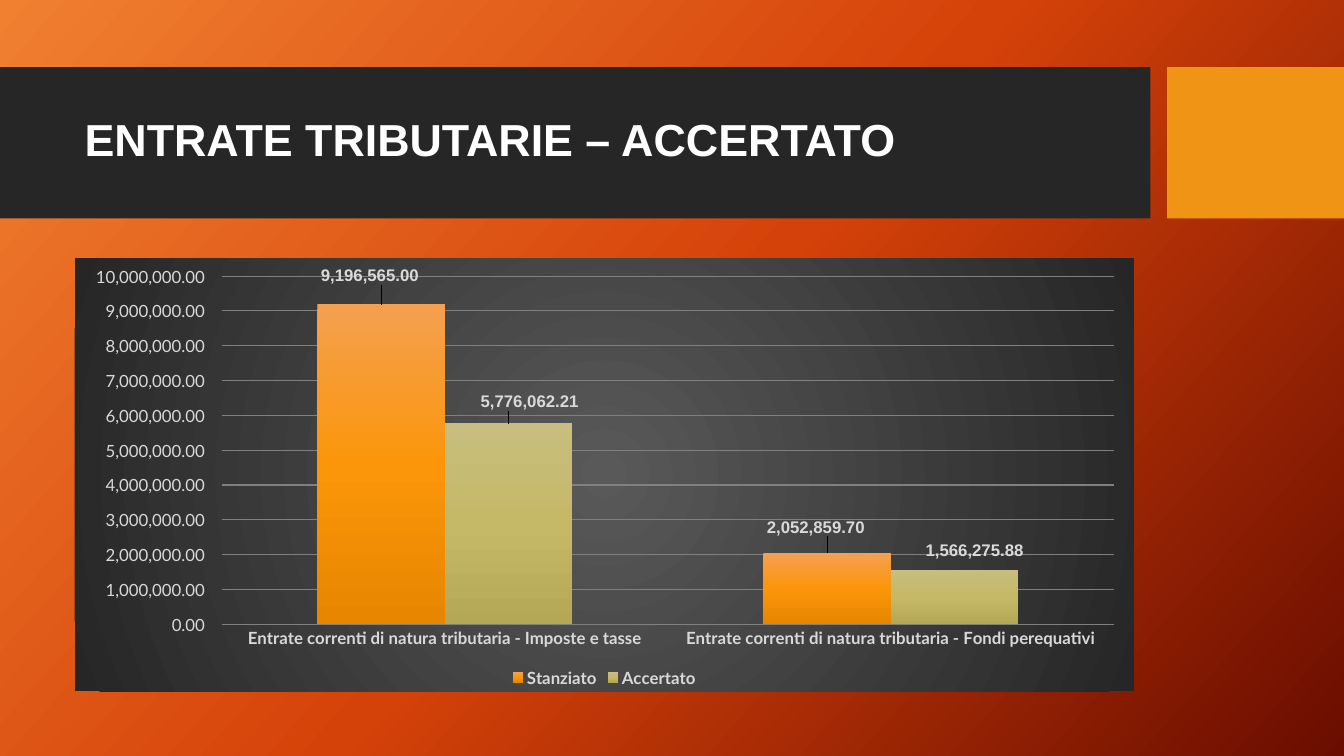
"""Build the slide on tax revenue, budgeted against assessed."""
from pptx import Presentation
from pptx.chart.data import CategoryChartData as ChartData
from pptx.dml.color import RGBColor as RGB
from pptx.enum.chart import XL_CHART_TYPE as CT, XL_LEGEND_POSITION as LP, XL_TICK_MARK as TM
from pptx.enum.shapes import MSO_SHAPE as SHAPE
from pptx.enum.text import MSO_ANCHOR as ANCHOR
from pptx.oxml import parse_xml
from pptx.oxml.ns import nsdecls, qn
from pptx.util import Pt

COLORS = {"band": "262626", "accent": "F09415", "title": "FFFFFF", "label": "D9D9D9", "grid": "808080"}
BACKDROP = [(0, "F18031"), (50, "D54209"), (100, "6A0D00")]
PANEL = [(0, "595959"), (100, "262626")]
CATEGORIES = [
    "Entrate correnti di natura tributaria - Imposte e tasse",
    "Entrate correnti di natura tributaria - Fondi perequativi",
]
EURO = "#,##0.00\\ _€"
SERIES = [
    {"name": "Stanziato", "values": (9196565, 2052859.7), "format": EURO,
     "stops": [(0, "F4A050"), (50, "FB960A"), (100, "E88600")],
     "offsets": [(-0.004, -0.035), (-0.004, -0.028)]},
    {"name": "Accertato", "values": (5776062.21, 1566275.88), "format": "#,##0.00",
     "stops": [(0, "C8BE7F"), (50, "C5B867"), (100, "B4A756")],
     "offsets": [(0.02, -0.019), (0.019, -0.014)]},
]


def gradient(stops, angle=None):
    gs = "".join(f'<a:gs pos="{pos * 1000}"><a:srgbClr val="{c}"/></a:gs>' for pos, c in stops)
    if angle is None:
        way = ('<a:path path="circle"><a:fillToRect l="50000" t="50000" '
               'r="50000" b="50000"/></a:path>')
    else:
        way = f'<a:lin ang="{angle * 60000}" scaled="0"/>'
    return parse_xml(f'<a:gradFill {nsdecls("a")} rotWithShape="1"><a:gsLst>{gs}</a:gsLst>{way}</a:gradFill>')


def layout(inner=False, **values):
    tags = '<c:layoutTarget val="inner"/><c:xMode val="edge"/><c:yMode val="edge"/>' if inner else ""
    tags += "".join(f'<c:{k} val="{v}"/>' for k, v in values.items())
    return parse_xml(f'<c:layout {nsdecls("c")}><c:manualLayout>{tags}</c:manualLayout></c:layout>')


class Deck:
    def __init__(self):
        self.prs = Presentation()
        self.prs.slide_width, self.prs.slide_height = Pt(960), Pt(540)
        self.s = self.prs.slides.add_slide(self.prs.slide_layouts[6])

    def color(self, name):
        return RGB.from_string(COLORS[name])

    def font(self, font, name, size, color, bold=False):
        font.name, font.size, font.bold = name, Pt(size), bold
        font.color.rgb = self.color(color)

    def background(self, stops, angle):
        self.s.background.fill.solid()
        bg = self.s.element.find(".//" + qn("p:bgPr"))
        bg.replace(bg.find(qn("a:solidFill")), gradient(stops, angle))

    def rect(self, x, y, w, h, color):
        sp = self.s.shapes.add_shape(SHAPE.RECTANGLE, Pt(x), Pt(y), Pt(w), Pt(h))
        sp.shadow.inherit = False
        sp.fill.solid()
        sp.fill.fore_color.rgb = self.color(color)
        sp.line.fill.background()

    def title(self, x, y, w, h, text):
        tf = self.s.shapes.add_textbox(Pt(x), Pt(y), Pt(w), Pt(h)).text_frame
        tf.word_wrap = True
        tf.vertical_anchor = ANCHOR.MIDDLE
        p = tf.paragraphs[0]
        p.text = text
        p.line_spacing = 0.9
        self.font(p.font, "Arial", 32, "title", True)

    def axis(self, axis, bold):
        axis.major_tick_mark = axis.minor_tick_mark = TM.NONE
        axis.format.line.fill.background()
        self.font(axis.tick_labels.font, "Lato", 12, "label", bold)

    def series(self, ser, spec_row):
        ser.invert_if_negative = False
        ser.format.fill.solid()
        sp_pr = ser._element.find(qn("c:spPr"))
        sp_pr.replace(sp_pr.find(qn("a:solidFill")), gradient(spec_row["stops"], 90))
        labels = ser.data_labels
        labels.show_value = True
        labels.number_format = spec_row["format"]
        labels.number_format_is_linked = False
        self.font(labels.font, "Arial", 12, "label", True)
        for i, (dx, dy) in enumerate(spec_row["offsets"]):
            self.font(ser.points[i].data_label.font, "Arial", 12, "label", True)
            idx = ser._element.findall(".//" + qn("c:dLbl"))[i].find(qn("c:idx"))
            idx.addnext(layout(x=dx, y=dy))

    def column_chart(self, x, y, w, h):
        data = ChartData()
        data.categories = CATEGORIES
        for row in SERIES:
            data.add_series(row["name"], row["values"])
        chart = self.s.shapes.add_chart(CT.COLUMN_CLUSTERED, Pt(x), Pt(y), Pt(w), Pt(h), data).chart
        self.font(chart.font, "Lato", 10, "title")
        chart.has_title = False
        chart.has_legend = True
        chart.legend.position = LP.BOTTOM
        chart.legend.include_in_layout = False
        self.font(chart.legend.font, "Lato", 12, "label", True)
        self.axis(chart.category_axis, True)
        values = chart.value_axis
        self.axis(values, False)
        values.minimum_scale, values.maximum_scale, values.major_unit = 0, 10000000, 1000000
        values.tick_labels.number_format = EURO
        values.tick_labels.number_format_is_linked = False
        values.has_major_gridlines = True
        line = values.major_gridlines.format.line
        line.width = Pt(0.75)
        line.color.rgb = self.color("grid")
        plot = chart.plots[0]
        plot.gap_width, plot.overlap, plot.vary_by_categories = 150, 0, False
        for ser, row in zip(plot.series, SERIES):
            self.series(ser, row)
        body = chart.element.find(qn("c:chart"))
        area = body.find(qn("c:plotArea"))
        for old in area.findall(qn("c:layout")):
            area.remove(old)
        area.insert(0, layout(True, x=0.139, y=0.042, w=0.842, h=0.803))
        panel = parse_xml(f'<c:spPr {nsdecls("c", "a")}><a:ln><a:noFill/></a:ln></c:spPr>')
        panel.insert(0, gradient(PANEL))
        body.addnext(panel)


def main():
    deck = Deck()
    deck.background(BACKDROP, 42)
    deck.rect(0, 48, 821.75, 108, "band")
    deck.rect(833.75, 48, 126.25, 108, "accent")
    deck.title(53.3, 59, 756.7, 85, "ENTRATE TRIBUTARIE – ACCERTATO")
    deck.column_chart(53.3, 184.3, 756.7, 309.6)
    deck.prs.save("out.pptx")


if __name__ == "__main__":
    main()
